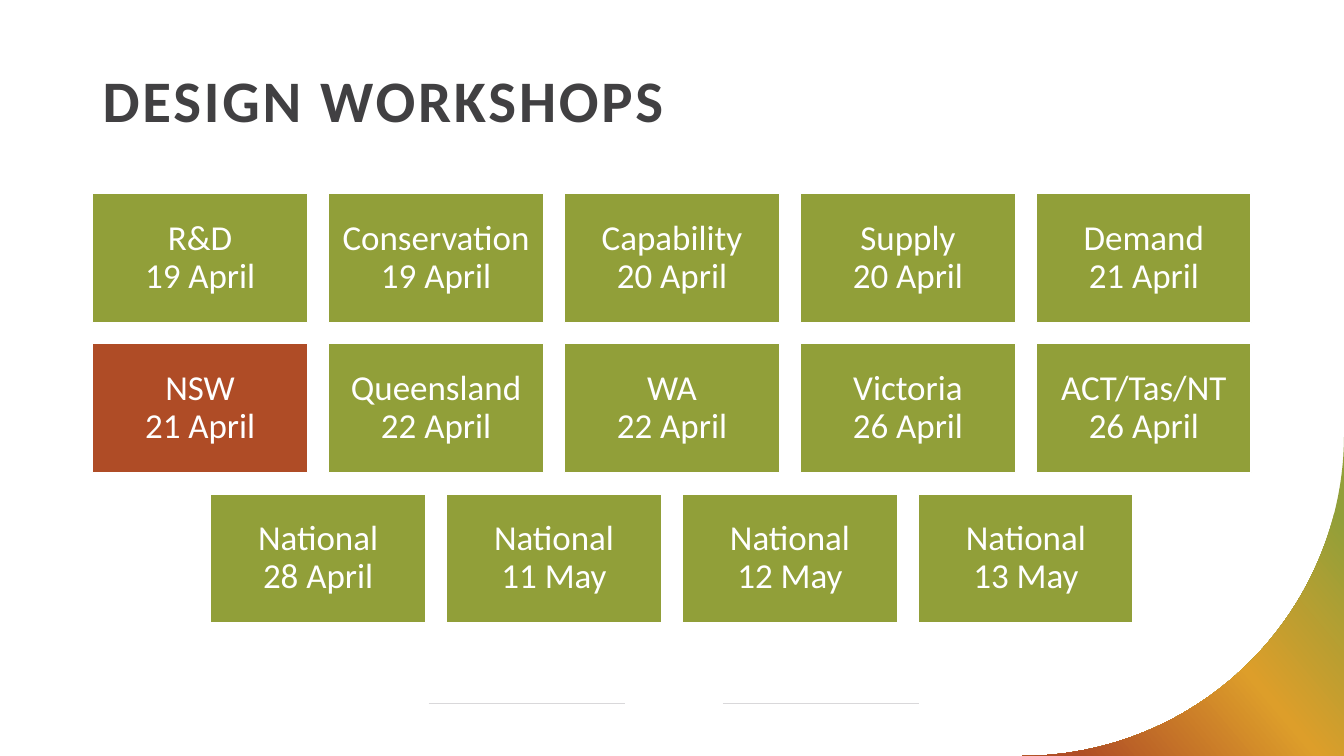
import copy
import math

from lxml import etree
from pptx import Presentation
from pptx import util as u
from pptx.dml.color import RGBColor
from pptx.enum import shapes, text
from pptx.oxml.ns import qn

THEME = {
    "font": "Calibri",
    "title_size": 42,
    "card_size": 25,
    "dark": RGBColor.from_string("414042"),
    "rule": RGBColor.from_string("D9D8DA"),
    "white": RGBColor.from_string("FFFFFF"),
    "green": RGBColor.from_string("919F39"),
    "amber": RGBColor.from_string("DD9E2A"),
    "rust": RGBColor.from_string("AF4C26"),
}
WIDTH, HEIGHT = 13.33, 7.5


def write(tf, content, size, color, bold=False, align=text.PP_ALIGN.LEFT):
    """Put one formatted paragraph in a text frame."""
    tf.word_wrap = True
    p = tf.paragraphs[0]
    p.text = content
    p.alignment = align
    p.line_spacing = 0.9
    fmt = {"name": THEME["font"], "size": u.Pt(size), "bold": bold}
    for r in p.runs:
        for name, value in fmt.items():
            setattr(r.font, name, value)
        r.font.color.rgb = color
    return p


prs = Presentation()
prs.slide_width, prs.slide_height = u.Inches(WIDTH), u.Inches(HEIGHT)
s = prs.slides.add_slide(prs.slide_layouts[6])

# Footer rules
for left in (4.25, 7.17):
    line = s.shapes.add_connector(
        shapes.MSO_CONNECTOR.STRAIGHT,
        u.Inches(left), u.Inches(6.98), u.Inches(left + 1.95), u.Inches(6.98))
    line.line.color.rgb = THEME["rule"]
    line.line.width = u.Pt(0.5)
    etree.SubElement(line._element.spPr, qn("a:effectLst"))

# Corner sweep: the area outside a quarter circle
RADIUS, STEPS = 3.19, 90
points = []
for i in range(STEPS + 1):
    angle = math.pi / 2 * i / STEPS
    points.append((u.Inches(WIDTH - RADIUS + RADIUS * math.cos(angle)),
                   u.Inches(HEIGHT - RADIUS + RADIUS * math.sin(angle))))
builder = s.shapes.build_freeform(u.Inches(WIDTH), u.Inches(HEIGHT))
builder.add_line_segments(points, close=True)
sp = builder.convert_to_shape()
sp.shadow.inherit = False
sp.line.fill.background()
sp.fill.gradient()
sp.fill.gradient_angle = 220
stop_list = sp._element.spPr.find(qn("a:gradFill")).find(qn("a:gsLst"))
stop_list.append(copy.deepcopy(stop_list[-1]))
sweep = [("green", 0.12), ("amber", 0.5), ("rust", 0.91)]
for stop, (color, position) in zip(sp.fill.gradient_stops, sweep):
    stop.color.rgb = THEME[color]
    stop.position = position

# Title
title = s.shapes.add_textbox(u.Inches(0.92), u.Inches(0.66), u.Inches(11.5), u.Inches(1.02))
p = write(title.text_frame, "DESIGN WORKSHOPS", THEME["title_size"], THEME["dark"], bold=True)
p.runs[0].font._element.set("spc", "200")

# Workshop cards, each row centred on the grid
workshops = [
    [("R&D", "19 April"), ("Conservation", "19 April"), ("Capability", "20 April"),
     ("Supply", "20 April"), ("Demand", "21 April")],
    [("NSW", "21 April"), ("Queensland", "22 April"), ("WA", "22 April"),
     ("Victoria", "26 April"), ("ACT/Tas/NT", "26 April")],
    [("National", "28 April"), ("National", "11 May"), ("National", "12 May"),
     ("National", "13 May")],
]
LEFT, TOP, CARD_W, CARD_H = 0.92, 1.92, 2.13, 1.28
PITCH_X, PITCH_Y, COLUMNS = 2.34, 1.49, 5
for row, cards in enumerate(workshops):
    indent = (COLUMNS - len(cards)) * PITCH_X / 2
    for column, (name, date) in enumerate(cards):
        sp = s.shapes.add_shape(
            shapes.MSO_SHAPE.RECTANGLE,
            u.Inches(LEFT + indent + column * PITCH_X), u.Inches(TOP + row * PITCH_Y),
            u.Inches(CARD_W), u.Inches(CARD_H))
        sp.shadow.inherit = False
        sp.fill.solid()
        sp.fill.fore_color.rgb = THEME["rust" if name == "NSW" else "green"]
        sp.line.color.rgb = THEME["white"]
        sp.line.width = u.Pt(1)
        tf = sp.text_frame
        for side in ("left", "right", "top", "bottom"):
            setattr(tf, f"margin_{side}", u.Inches(0.1))
        tf.vertical_anchor = text.MSO_ANCHOR.MIDDLE
        write(tf, f"{name}\n{date}", THEME["card_size"], THEME["white"],
              align=text.PP_ALIGN.CENTER)

prs.save("out.pptx")
